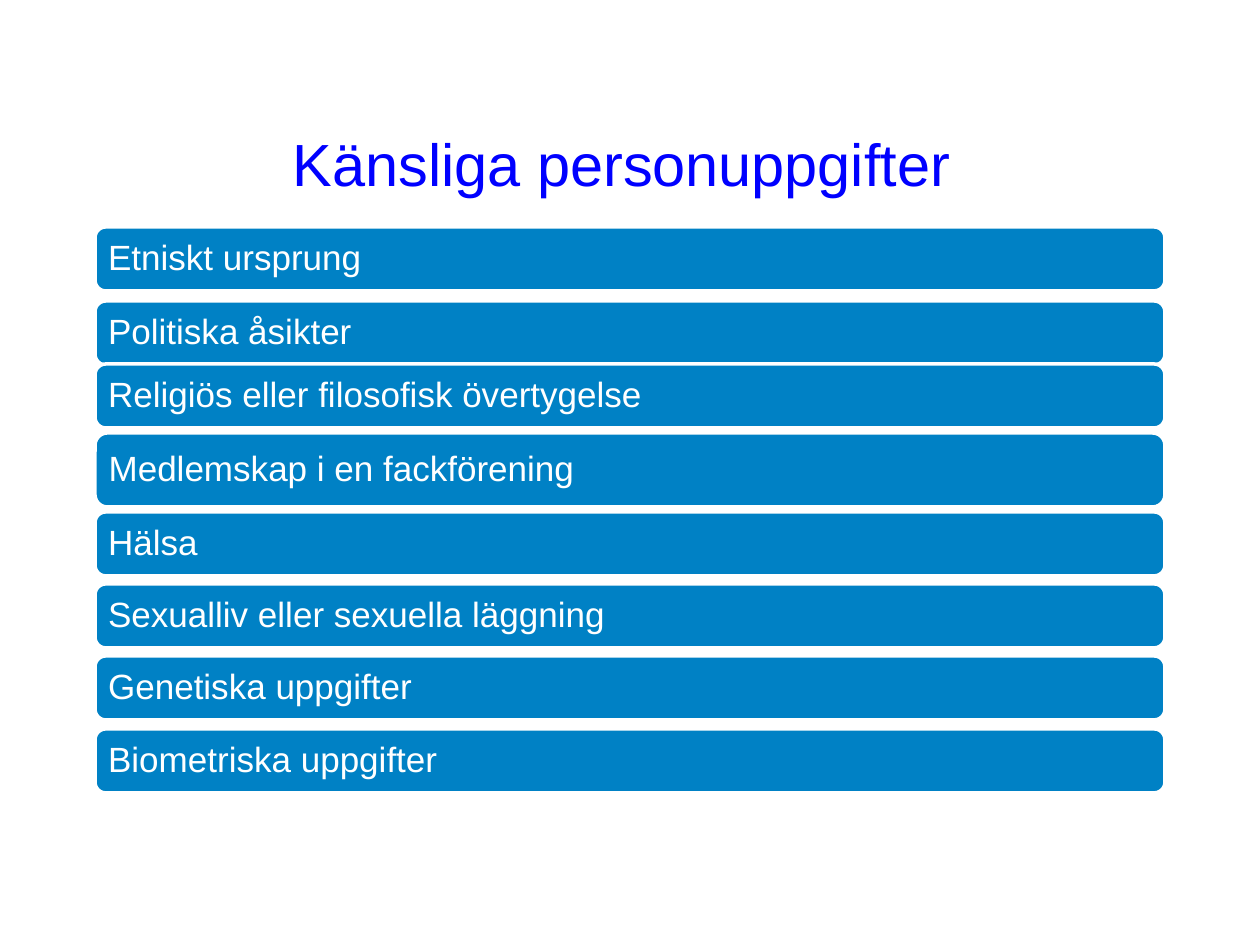
from pptx import Presentation
from pptx.dml.color import RGBColor
from pptx.enum.shapes import MSO_SHAPE as Shape
from pptx.enum.text import MSO_ANCHOR as Anchor, PP_ALIGN as Align
from pptx.util import Pt

PX = 914400 // 126
TITLE = "Känsliga personuppgifter "
BAR_HEIGHT = 64
TALL_BAR_HEIGHT = 74
BARS = [
    ("Etniskt ursprung", 227, BAR_HEIGHT),
    ("Politiska åsikter", 301, BAR_HEIGHT),
    ("Religiös eller filosofisk övertygelse", 364, BAR_HEIGHT),
    ("Medlemskap i en fackförening", 433, TALL_BAR_HEIGHT),
    ("Hälsa", 512, BAR_HEIGHT),
    ("Sexualliv eller sexuella läggning", 584, BAR_HEIGHT),
    ("Genetiska uppgifter", 656, BAR_HEIGHT),
    ("Biometriska uppgifter", 729, BAR_HEIGHT),
]
LEFT, WIDTH = 95, 1070


def px(*lengths):
    return [length * PX for length in lengths]


def color(value):
    return RGBColor.from_string(value)


def write_text(shape, text, *, size, fill, align, inset, spacing=1.0):
    frame = shape.text_frame
    frame.word_wrap = True
    frame.vertical_anchor = Anchor.MIDDLE
    frame.margin_left = frame.margin_right = inset * PX
    frame.margin_top = frame.margin_bottom = inset * PX
    paragraph = frame.paragraphs[0]
    paragraph.text = text
    paragraph.alignment = align
    paragraph.line_spacing = spacing
    paragraph.font.name = "Arial"
    paragraph.font.size = Pt(size)
    paragraph.font.color.rgb = color(fill)


def add_bar(slide, text, top, height):
    bar = slide.shapes.add_shape(Shape.ROUNDED_RECTANGLE, *px(LEFT, top, WIDTH, height))
    bar.shadow.inherit = False
    bar.fill.solid()
    bar.fill.fore_color.rgb = color("0081C5")
    bar.line.color.rgb = color("FFFFFF")
    bar.line.width = Pt(2)
    write_text(bar, text, size=20, fill="FFFFFF", align=Align.LEFT, inset=10, spacing=0.9)


def main():
    presentation = Presentation()
    presentation.slide_width, presentation.slide_height = px(1260, 945)
    slide = presentation.slides.add_slide(presentation.slide_layouts[6])
    title = slide.shapes.add_textbox(*px(LEFT, 84, WIDTH, 158))
    write_text(title, TITLE, size=34, fill="0000FF", align=Align.CENTER, inset=6)
    for text, top, height in BARS:
        add_bar(slide, text, top, height)
    presentation.save("out.pptx")


if __name__ == "__main__":
    main()
